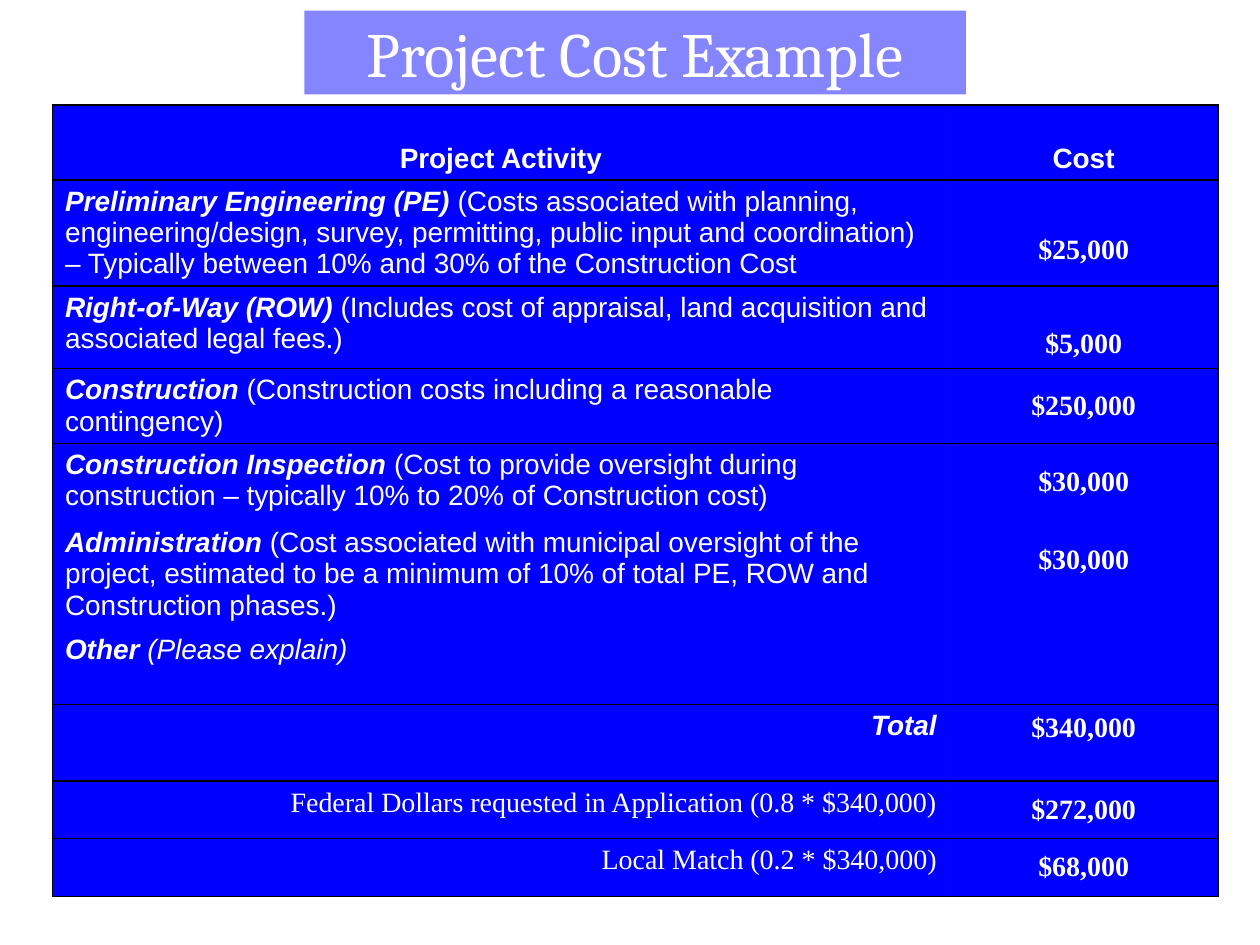
from dataclasses import dataclass

from lxml import etree
from pptx import Presentation
from pptx.dml.color import RGBColor
from pptx.enum.shapes import MSO_SHAPE
from pptx.enum.text import MSO_ANCHOR, PP_ALIGN
from pptx.oxml.ns import qn
from pptx.util import Pt

LEFT, CENTER, RIGHT = PP_ALIGN.LEFT, PP_ALIGN.CENTER, PP_ALIGN.RIGHT
TOP, MIDDLE, BOTTOM = MSO_ANCHOR.TOP, MSO_ANCHOR.MIDDLE, MSO_ANCHOR.BOTTOM
RECTANGLE = MSO_SHAPE.RECTANGLE

COLORS = {"blue": "0000FF", "white": "FFFFFF", "black": "000000"}
SANS, SERIF, TITLE_FONT = "Arial", "Times New Roman", "Cambria"
COLUMN_WIDTHS = (512.5, 153.5)
INSET = 3.6


@dataclass
class CostRow:
    height: float
    activity: str
    cost: str
    detail: str = ""
    align: PP_ALIGN = LEFT
    anchor: MSO_ANCHOR = TOP
    font: str = SANS
    bold: bool = True
    italic: bool = True
    detail_italic: bool = False
    cost_font: str = SERIF
    cost_anchor: MSO_ANCHOR = MIDDLE
    cost_shift: float = 0  # points below the middle of the row
    ruled_below: bool = True


ROWS = [
    CostRow(43, "Project Activity", "Cost", align=CENTER, anchor=BOTTOM,
            italic=False, cost_font=SANS, cost_anchor=BOTTOM),
    CostRow(60.5, "Preliminary Engineering (PE)", "$25,000",
            " (Costs associated with planning, engineering/design, survey, "
            "permitting, public input and coordination) – Typically between "
            "10% and 30% of the Construction Cost", cost_shift=9.7),
    CostRow(47, "Right-of-Way (ROW)", "$5,000",
            " (Includes cost of appraisal, land acquisition and associated "
            "legal fees.)", cost_shift=9.7),
    CostRow(42.7, "Construction ", "$250,000",
            "(Construction costs including a reasonable contingency)"),
    CostRow(44.6, "Construction Inspection ", "$30,000",
            "(Cost to provide oversight during construction – typically 10% "
            "to 20% of Construction cost)", ruled_below=False),
    CostRow(61, "Administration ", "$30,000",
            "(Cost associated with municipal oversight of the project, "
            "estimated to be a minimum of 10% of total PE, ROW and "
            "Construction phases.)", cost_shift=-8.6, ruled_below=False),
    CostRow(43.7, "Other ", "", "(Please explain)", detail_italic=True),
    CostRow(43.7, "Total", "$340,000", align=RIGHT, cost_shift=-8.6),
    CostRow(33, "Federal Dollars requested in Application (0.8 * $340,000)",
            "$272,000", align=RIGHT, font=SERIF, bold=False, italic=False),
    CostRow(33, "Local Match (0.2 * $340,000)", "$68,000", align=RIGHT,
            font=SERIF, bold=False, italic=False),
]


def rgb(name: str) -> RGBColor:
    return RGBColor.from_string(COLORS[name])


def write(paragraph, text: str, *, font: str = SANS, size: float = 16,
          bold: bool = False, italic: bool = False,
          align: PP_ALIGN = LEFT) -> None:
    paragraph.alignment = align
    run = paragraph.add_run()
    run.text = text
    run.font.name = font
    run.font.size = Pt(size)
    run.font.bold = bold
    run.font.italic = italic
    run.font.color.rgb = rgb("white")


def set_border(cell, side: str, visible: bool) -> None:
    line = etree.SubElement(cell._tc.get_or_add_tcPr(), qn(f"a:ln{side}"),
                            w=str(Pt(1)))
    if visible:
        fill = etree.SubElement(line, qn("a:solidFill"))
        etree.SubElement(fill, qn("a:srgbClr"), val=COLORS["black"])
    else:
        etree.SubElement(line, qn("a:noFill"))


def format_cell(cell, anchor: MSO_ANCHOR, shift: float,
                ruled_above: bool, ruled_below: bool) -> None:
    """Style a cell; the shift moves middle-anchored text down by that much."""
    for side, visible in (("L", True), ("R", True),
                          ("T", ruled_above), ("B", ruled_below)):
        set_border(cell, side, visible)
    cell.fill.solid()
    cell.fill.fore_color.rgb = rgb("blue")
    cell.vertical_anchor = anchor
    cell.margin_top = Pt(INSET + max(0, 2 * shift))
    cell.margin_bottom = Pt(INSET + max(0, -2 * shift))


def add_title(slide, text: str) -> None:
    banner = slide.shapes.add_shape(RECTANGLE, Pt(174), Pt(6), Pt(378), Pt(48))
    banner.shadow.inherit = False
    banner.line.fill.background()
    banner.fill.solid()
    banner.fill.fore_color.rgb = rgb("blue")
    color = banner.fill._xPr.find(f".//{qn('a:srgbClr')}")
    etree.SubElement(color, qn("a:alpha"), val="48000")
    banner.text_frame.vertical_anchor = MIDDLE
    write(banner.text_frame.paragraphs[0], text, font=TITLE_FONT, size=36,
          align=CENTER)


def add_cost_table(slide, rows: list[CostRow]) -> None:
    table = slide.shapes.add_table(
        len(rows), len(COLUMN_WIDTHS), Pt(30), Pt(60), Pt(sum(COLUMN_WIDTHS)),
        Pt(sum(row.height for row in rows))).table
    table.first_row = table.horz_banding = False
    for column, width in zip(table.columns, COLUMN_WIDTHS):
        column.width = Pt(width)

    ruled_above = True
    for index, row in enumerate(rows):
        table.rows[index].height = Pt(row.height)
        activity_cell, cost_cell = table.cell(index, 0), table.cell(index, 1)
        format_cell(activity_cell, row.anchor, 0, ruled_above, row.ruled_below)
        format_cell(cost_cell, row.cost_anchor, row.cost_shift,
                    ruled_above, row.ruled_below)
        ruled_above = row.ruled_below

        activity = activity_cell.text_frame.paragraphs[0]
        write(activity, row.activity, font=row.font, bold=row.bold,
              italic=row.italic, align=row.align)
        if row.detail:
            write(activity, row.detail, italic=row.detail_italic,
                  align=row.align)
        if row.cost:
            write(cost_cell.text_frame.paragraphs[0], row.cost,
                  font=row.cost_font, bold=True, align=CENTER)


def main() -> None:
    presentation = Presentation()
    presentation.slide_width, presentation.slide_height = Pt(720), Pt(540)
    slide = presentation.slides.add_slide(presentation.slide_layouts[6])
    add_title(slide, "Project Cost Example")
    add_cost_table(slide, ROWS)
    presentation.save("out.pptx")


if __name__ == "__main__":
    main()
